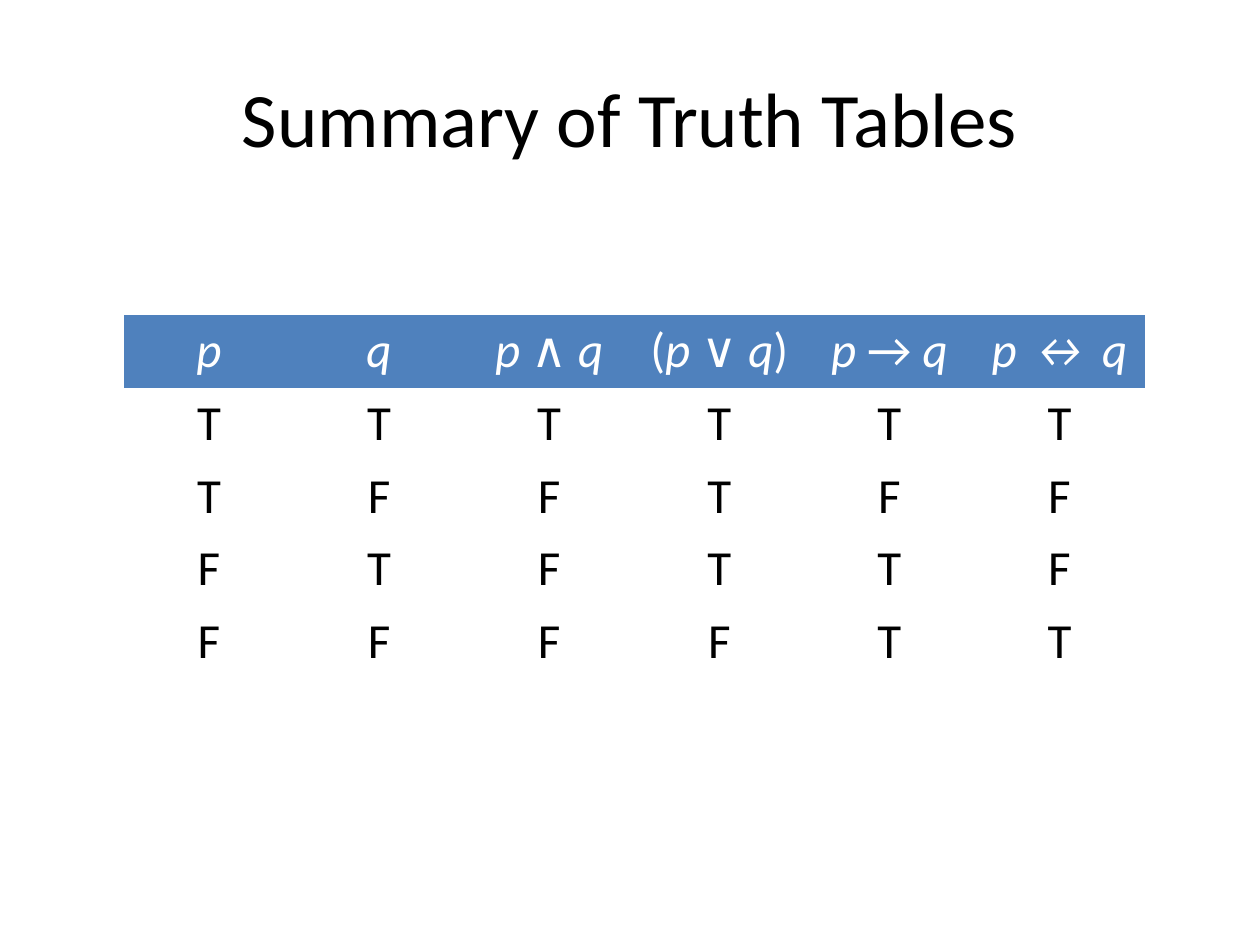
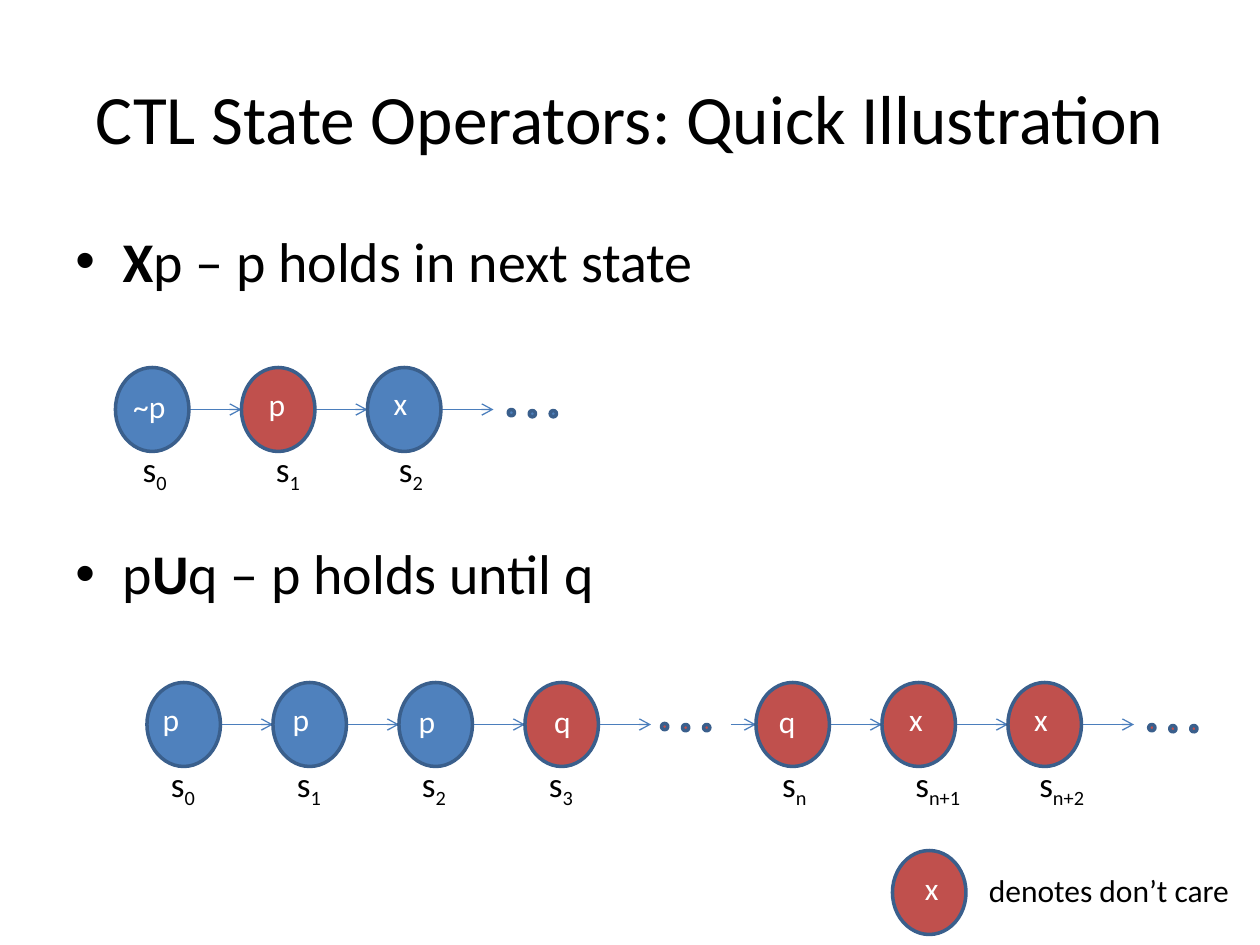
import dataclasses

import lxml.etree
import pptx
import pptx.dml.color
import pptx.enum.shapes
import pptx.enum.text
import pptx.oxml.ns
import pptx.util

SHAPE = pptx.enum.shapes.MSO_SHAPE
ALIGN = pptx.enum.text.PP_ALIGN
ANCHOR = pptx.enum.text.MSO_ANCHOR
qn = pptx.oxml.ns.qn

# The grid has 120 columns and 90 rows, each a twelfth of an inch
COLUMNS, ROWS = 120, 90
STATE_WIDTH, STATE_HEIGHT, STATE_STEP = 7, 8, 12


@dataclasses.dataclass(frozen=True)
class Theme:
    font: str = "Calibri"
    ink: str = "000000"
    paper: str = "FFFFFF"
    blue: str = "4F81BD"
    red: str = "C0504D"
    outline: str = "3A5F8C"
    arrow: str = "4B7EBC"
    title: float = 44
    long_title: float = 39.6
    body: float = 32
    table: float = 28
    state_name: float = 20
    small: float = 18
    no_grid: str = "{2D5ABB26-0587-4C30-8999-92F81FD0307C}"


def rgb(color):
    return pptx.dml.color.RGBColor.from_string(color)


def add_text(paragraph, text, *, font, size, color, align=ALIGN.LEFT, emphasis="italic"):
    """Put text into a paragraph; parts between bars get the emphasis."""
    paragraph.alignment = align
    for index, part in enumerate(text.split("|")):
        if not part:
            continue
        run = paragraph.add_run()
        run.text = part
        run.font.name = font
        run.font.size = pptx.util.Pt(size)
        run.font.color.rgb = rgb(color)
        marked = index % 2 == 1
        run.font.bold = marked and emphasis == "bold"
        run.font.italic = marked and emphasis == "italic"
        if marked and emphasis == "subscript":
            run.font._element.set("baseline", "-25000")


class Deck:
    def __init__(self, theme):
        self.theme = theme
        self.show = pptx.Presentation()
        self.show.slide_width = pptx.util.Inches(10)
        self.show.slide_height = pptx.util.Inches(7.5)
        self.slide = None

    def x(self, columns):
        return round(self.show.slide_width * columns / COLUMNS)

    def y(self, rows):
        return round(self.show.slide_height * rows / ROWS)

    def box(self, left, top, width, height):
        return self.x(left), self.y(top), self.x(width), self.y(height)

    def text(self, paragraph, content, size, color=None, **look):
        add_text(paragraph, content, font=self.theme.font, size=size,
                 color=color or self.theme.ink, **look)

    def new_slide(self, heading, size):
        self.slide = self.show.slides.add_slide(self.show.slide_layouts[5])
        title = self.slide.shapes.title
        title.left, title.top, title.width, title.height = self.box(6, 3.6, 108, 15)
        frame = title.text_frame
        frame.auto_size = pptx.enum.text.MSO_AUTO_SIZE.NONE
        frame.vertical_anchor = ANCHOR.MIDDLE
        self.text(frame.paragraphs[0], heading, size, align=ALIGN.CENTER)

    def table(self, rows, *place):
        grid = self.slide.shapes.add_table(len(rows), len(rows[0]), *self.box(*place)).table
        grid._tbl.tblPr.find(qn("a:tableStyleId")).text = self.theme.no_grid
        grid.horz_banding = False
        for row, values in enumerate(rows):
            for column, value in enumerate(values):
                cell = grid.cell(row, column)
                cell.vertical_anchor = ANCHOR.MIDDLE
                if row == 0:
                    cell.fill.solid()
                    cell.fill.fore_color.rgb = rgb(self.theme.blue)
                else:
                    cell.fill.background()
                self.text(cell.text_frame.paragraphs[0], value, self.theme.table,
                          self.theme.ink if row else self.theme.paper, align=ALIGN.CENTER)

    def bullets(self, lines, gap, *place):
        frame = self.slide.shapes.add_textbox(*self.box(*place)).text_frame
        frame.word_wrap = True
        for index, line in enumerate(lines):
            paragraph = frame.add_paragraph() if index else frame.paragraphs[0]
            self.text(paragraph, line, self.theme.body, emphasis="bold")
            if index:
                paragraph.space_before = pptx.util.Pt(gap)
            properties = paragraph._p.get_or_add_pPr()
            indent = self.x(4.5)
            properties.set("marL", str(indent))
            properties.set("indent", str(-indent))
            font = lxml.etree.SubElement(properties, qn("a:buFont"))
            font.set("typeface", "Arial")
            lxml.etree.SubElement(properties, qn("a:buChar")).set("char", "•")

    def label(self, content, left, top, width, size, color=None):
        height = 5.3 if size == self.theme.state_name else 4.8
        frame = self.slide.shapes.add_textbox(*self.box(left, top, width, height)).text_frame
        frame.word_wrap = False
        self.text(frame.paragraphs[0], content, size, color, emphasis="subscript")

    def ellipse(self, left, top, width, height, color):
        oval = self.slide.shapes.add_shape(SHAPE.OVAL, *self.box(left, top, width, height))
        oval.shadow.inherit = False
        oval.fill.solid()
        oval.fill.fore_color.rgb = rgb(color)
        oval.line.color.rgb = rgb(self.theme.outline)
        oval.line.width = pptx.util.Pt(2)

    def arrow(self, start, end, row):
        link = self.slide.shapes.add_connector(
            pptx.enum.shapes.MSO_CONNECTOR.STRAIGHT,
            self.x(start), self.y(row), self.x(end), self.y(row))
        link.line.color.rgb = rgb(self.theme.arrow)
        link.line.width = pptx.util.Pt(0.75)
        line = link.line._get_or_add_ln()
        lxml.etree.SubElement(line, qn("a:tailEnd")).set("type", "arrow")
        lxml.etree.SubElement(link._element.spPr, qn("a:effectLst"))

    def dots(self, left, top, color):
        for index in range(3):
            self.ellipse(left + 2 * index, top + 0.1 * (index > 0), 0.6, 0.6, color)

    def state(self, left, top, color, letter, shift, drop):
        self.ellipse(left, top, STATE_WIDTH, STATE_HEIGHT, color)
        width = {"x": 3.7, "~p": 5.5}.get(letter, 4.1)
        self.label(letter, left + shift, top + drop, width, self.theme.small, self.theme.paper)

    def chain(self, left, top, states):
        """Draw a row of states, each with its name below and an arrow to the next."""
        for index, (color, letter, shift, drop, name, name_shift) in enumerate(states):
            start = left + STATE_STEP * index
            self.arrow(start + STATE_WIDTH, start + STATE_STEP, top + STATE_HEIGHT / 2)
            self.state(start, top, color, letter, shift, drop)
            self.label(f"s|{name}|", start + name_shift, top + 7,
                       7.2 if "+" in name else 4.9, self.theme.state_name)


def truth_tables(deck):
    deck.new_slide("Summary of Truth Tables", deck.theme.title)
    operators = ["|p|", "|q|", "|p| ∧ |q|", "(|p |∨ |q|)", "|p |→ |q|", "|p ↔ q|"]
    values = ["TTTTTT", "TFFTFF", "FTFTTF", "FFFFTT"]
    deck.table([operators, *values], 11.8, 30, 97.2, 34)


def state_operators(deck):
    blue, red = deck.theme.blue, deck.theme.red
    deck.new_slide("CTL State Operators: Quick Illustration", deck.theme.long_title)
    deck.bullets(["|X|p – p holds in next state", "p|U|q – p holds until q"],
                 140, 6, 21, 108, 59.4)

    # States: colour, letter with its shift and drop, name with its shift
    deck.chain(11, 35, [
        (blue, "~p", 0.5, 1.3, "0", 1.4),
        (red, "p", 1.4, 1.1, "1", 2.1),
        (blue, "x", 1.3, 1, "2", 1.8),
    ])
    deck.dots(48.4, 39, blue)

    # p holds until q: first states, then state n and those after it
    deck.chain(14, 65, [
        (blue, "p", 0.3, 1.1, "0", 1.1),
        (blue, "p", 0.7, 1.1, "1", 1.1),
        (blue, "p", 0.7, 1.3, "2", 1),
        (red, "q", 1.6, 1.3, "3", 1.1),
    ])
    deck.dots(63, 68.9, red)
    deck.arrow(69.6, 72, 69)
    deck.chain(72, 65, [
        (red, "q", 1, 1.3, "n", 1.3),
        (red, "x", 1.4, 1.1, "n+1", 2),
        (red, "x", 1.3, 1.1, "n+2", 1.8),
    ])
    deck.dots(109.4, 69, red)

    # Legend
    deck.state(85, 81, red, "x", 1.9, 1.2)
    deck.label("denotes don’t care", 93, 82.4, 25.6, deck.theme.small)


def main():
    deck = Deck(Theme())
    truth_tables(deck)
    state_operators(deck)
    deck.show.save("out.pptx")


if __name__ == "__main__":
    main()
